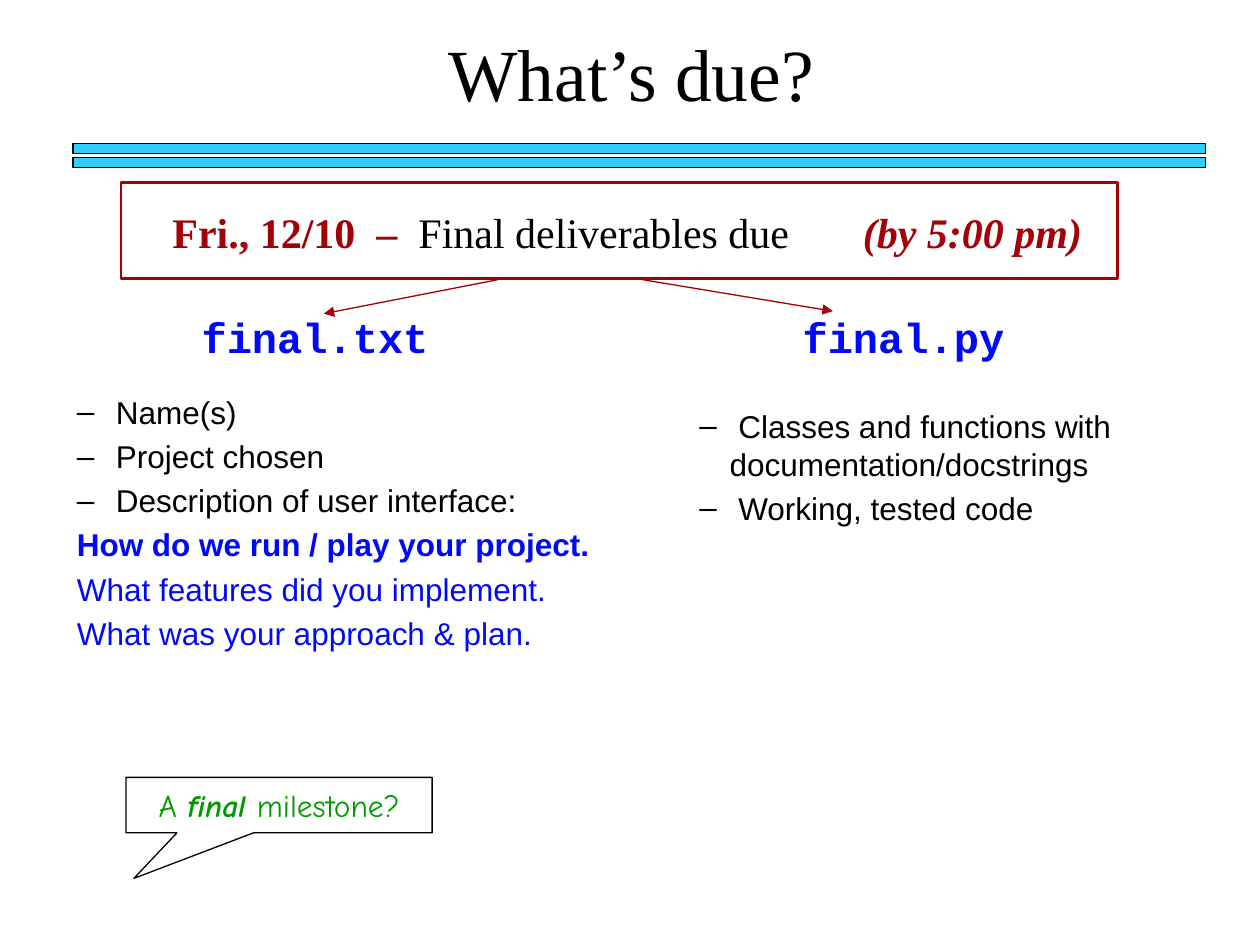
"""Build the "What's due?" slide listing the final deliverables."""
from dataclasses import dataclass

from lxml import etree
from pptx import Presentation
from pptx.dml.color import RGBColor
from pptx.enum.shapes import MSO_CONNECTOR, MSO_SHAPE
from pptx.enum.text import MSO_ANCHOR, MSO_AUTO_SIZE, PP_ALIGN
from pptx.oxml.ns import qn
from pptx.util import Inches, Pt

RECT = MSO_SHAPE.RECTANGLE
CALLOUT = MSO_SHAPE.RECTANGULAR_CALLOUT
STRAIGHT = MSO_CONNECTOR.STRAIGHT
TOP, MIDDLE = MSO_ANCHOR.TOP, MSO_ANCHOR.MIDDLE
LEFT, CENTER = PP_ALIGN.LEFT, PP_ALIGN.CENTER
NO_FIT = MSO_AUTO_SIZE.NONE

BLACK = RGBColor(0x00, 0x00, 0x00)
WHITE = RGBColor(0xFF, 0xFF, 0xFF)
SKY = RGBColor(0x33, 0xCC, 0xFF)
RED = RGBColor(0xA3, 0x01, 0x07)
BLUE = RGBColor(0x00, 0x0A, 0xF9)
GREEN = RGBColor(0x00, 0x99, 0x00)

SERIF, SANS = "Times New Roman", "Arial"
MONO, HAND = "Courier New", "Comic Neue"
INDENT = Inches(0.24)
DUE_TAB = Inches(5.48)


@dataclass(frozen=True)
class Box:
    left: float
    top: float
    width: float
    height: float


@dataclass(frozen=True)
class Run:
    text: str
    color: RGBColor = BLACK
    bold: bool = False
    italic: bool = False


@dataclass(frozen=True)
class Item:
    run: Run
    bullet: bool = False


@dataclass(frozen=True)
class Deliverable:
    name: str
    name_left: float
    arrow: tuple[float, float, float, float]
    box: Box
    items: tuple[Item, ...]


DELIVERABLES = (
    Deliverable("final.txt", 1, (3.95, 2.22, 2.57, 2.49), Box(0.51, 3.07, 4.27, 2.21), (
        Item(Run(" Name(s)"), True),
        Item(Run(" Project chosen"), True),
        Item(Run(" Description of user interface:"), True),
        Item(Run("How do we run / play your project.", BLUE, True)),
        Item(Run("What features did you implement.", BLUE)),
        Item(Run("What was your approach & plan.", BLUE)),
    )),
    Deliverable("final.py", 5.67, (5.1, 2.22, 6.61, 2.47), Box(5.45, 3.18, 4.27, 1.06), (
        Item(Run(" Classes and functions with documentation/docstrings"), True),
        Item(Run(" Working, tested code"), True),
    )),
)


def place(sp, box: Box) -> None:
    sp.left, sp.top = Inches(box.left), Inches(box.top)
    sp.width, sp.height = Inches(box.width), Inches(box.height)


def setup_frame(tf, anchor=TOP) -> None:
    tf.word_wrap = True
    tf.auto_size = NO_FIT
    tf.vertical_anchor = anchor


def add_runs(p, runs, font: str, size: float, align=LEFT) -> None:
    p.alignment = align
    for run in runs:
        r = p.add_run()
        r.text = run.text
        r.font.name, r.font.size = font, Pt(size)
        r.font.bold, r.font.italic = run.bold, run.italic
        r.font.color.rgb = run.color


def add_text(s, box: Box, runs, font: str, size: float, before: float, align=LEFT):
    sp = s.shapes.add_textbox(0, 0, 0, 0)
    place(sp, box)
    setup_frame(sp.text_frame)
    p = sp.text_frame.paragraphs[0]
    p.space_before = Pt(before)
    add_runs(p, runs, font, size, align)
    return p


def add_box(s, kind, box: Box, fill, line: RGBColor, width: float):
    sp = s.shapes.add_shape(kind, 0, 0, 0, 0)
    place(sp, box)
    sp.shadow.inherit = False
    if fill is None:
        sp.fill.background()
    else:
        sp.fill.solid()
        sp.fill.fore_color.rgb = fill
    sp.line.color.rgb, sp.line.width = line, Pt(width)
    return sp


def add_arrow(s, ends: tuple[float, float, float, float]) -> None:
    sp = s.shapes.add_connector(STRAIGHT, *(Inches(v) for v in ends))
    sp.line.color.rgb, sp.line.width = RED, Pt(0.75)
    etree.SubElement(sp.line._get_or_add_ln(), qn("a:tailEnd"), type="triangle")
    etree.SubElement(sp._element.spPr, qn("a:effectLst"))


def fill_list(sp, deliverable: Deliverable) -> None:
    place(sp, deliverable.box)
    tf = sp.text_frame
    setup_frame(tf)
    for i, item in enumerate(deliverable.items):
        p = tf.add_paragraph() if i else tf.paragraphs[0]
        add_runs(p, (item.run,), SANS, 18)
        pPr = p._p.get_or_add_pPr()
        pPr.set("marL", str(INDENT if item.bullet else 0))
        pPr.set("indent", str(-INDENT if item.bullet else 0))
        if item.bullet:
            etree.SubElement(pPr, qn("a:buFont"), typeface=SANS)
            etree.SubElement(pPr, qn("a:buChar"), char="–")
        else:
            etree.SubElement(pPr, qn("a:buNone"))


def main() -> None:
    prs = Presentation()
    prs.slide_width, prs.slide_height = Inches(10), Inches(7.5)
    s = prs.slides.add_slide(prs.slide_layouts[3])
    title, *bodies = list(s.placeholders)[:3]
    for sp in list(s.placeholders)[3:]:
        sp._element.getparent().remove(sp._element)

    place(title, Box(1.26, 0.17, 7.5, 0.8))
    setup_frame(title.text_frame)
    p = title.text_frame.paragraphs[0]
    p.space_before = Pt(5)
    add_runs(p, (Run("What’s due?"),), SERIF, 42, CENTER)

    for top in (1.14, 1.25):
        add_box(s, RECT, Box(0.58, top, 8.99, 0.08), SKY, BLACK, 0.75)

    add_box(s, RECT, Box(0.96, 1.45, 7.91, 0.76), None, RED, 1.5)
    p = add_text(s, Box(1.27, 1.59, 7.67, 0.5), (
        Run("Fri., 12/10  – ", RED, True),
        Run(" Final deliverables due\t"),
        Run("(by 5:00 pm)", RED, True, True),
    ), SERIF, 24, 3)
    tabs = etree.SubElement(p._p.get_or_add_pPr(), qn("a:tabLst"))
    etree.SubElement(tabs, qn("a:tab"), pos=str(DUE_TAB), algn="l")

    for body, d in zip(bodies, DELIVERABLES):
        add_arrow(s, d.arrow)
        add_text(s, Box(d.name_left, 2.42, 3, 0.5), (Run(d.name, BLUE, True),),
                 MONO, 24, 5, CENTER)
        fill_list(body, d)

    sp = add_box(s, CALLOUT, Box(1, 6.17, 2.43, 0.44), WHITE, BLACK, 0.75)
    sp.adjustments[0], sp.adjustments[1] = -0.474, 1.322
    setup_frame(sp.text_frame, MIDDLE)
    add_runs(sp.text_frame.paragraphs[0], (
        Run("A ", GREEN),
        Run("final ", GREEN, True, True),
        Run("milestone?", GREEN),
    ), HAND, 18, CENTER)

    prs.save("out.pptx")


if __name__ == "__main__":
    main()
